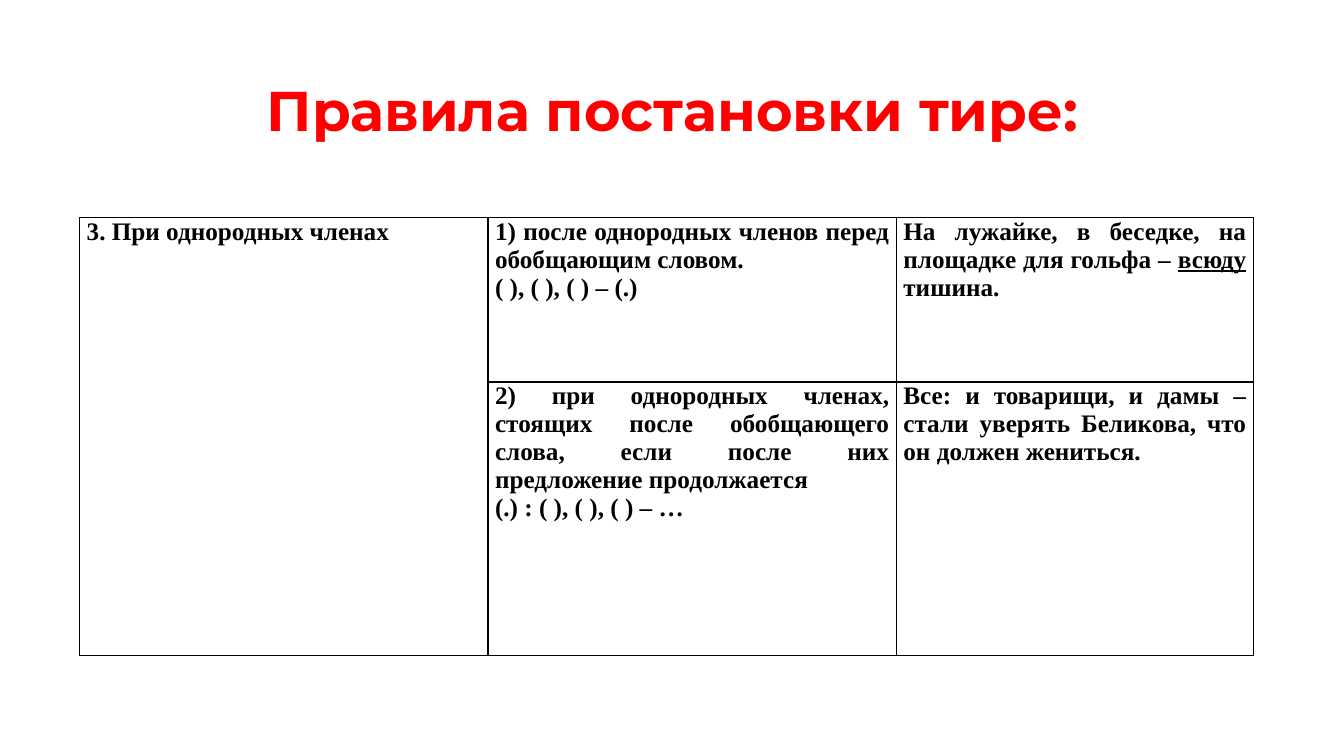
from dataclasses import dataclass

from lxml import etree
from pptx import Presentation, util as u
from pptx.dml.color import RGBColor
from pptx.enum import text
from pptx.oxml.ns import qn

RED = RGBColor(0xFF, 0x00, 0x00)
BLACK = RGBColor(0x00, 0x00, 0x00)
WHITE = RGBColor(0xFF, 0xFF, 0xFF)
TITLE_FONT = "Montserrat"
BODY_FONT = "Times New Roman"

COLUMNS = (4.05, 4.05, 3.54)
ROWS = (1.63, 2.71)


@dataclass(frozen=True)
class RuleCell:
    row: int
    col: int
    lines: tuple[str, ...]
    underlined: str = ""


CELLS = (
    RuleCell(0, 0, ("3. При однородных членах",)),
    RuleCell(0, 1, ("1) после однородных членов перед обобщающим словом.",
                    "( ), ( ), ( ) – (.)")),
    RuleCell(0, 2, ("На лужайке, в беседке, на площадке для гольфа – всюду тишина.",),
             underlined="всюду"),
    RuleCell(1, 1, ("2) при однородных членах, стоящих после обобщающего слова, "
                    "если после них предложение продолжается",
                    "(.) : ( ), ( ), ( ) – …")),
    RuleCell(1, 2, ("Все: и товарищи, и дамы – стали уверять Беликова, "
                    "что он должен жениться.",)),
)


def format_font(font, name: str, size: int, color: RGBColor) -> None:
    font.name, font.size, font.bold = name, u.Pt(size), True
    font.color.rgb = color


def add_title(s, title: str) -> None:
    sp = s.shapes.title
    sp.left, sp.top, sp.width, sp.height = map(u.Inches, (0.92, 0.4, 11.5, 1.45))
    tf = sp.text_frame
    tf.text = title
    tf.vertical_anchor = text.MSO_ANCHOR.MIDDLE
    p = tf.paragraphs[0]
    p.alignment, p.line_spacing = text.PP_ALIGN.CENTER, 0.9
    format_font(p.runs[0].font, TITLE_FONT, 40, RED)


def style_cell(cell) -> None:
    """Give a cell a white fill, tight margins and a thin black frame."""
    cell.fill.solid()
    cell.fill.fore_color.rgb = WHITE
    cell.margin_left = cell.margin_right = u.Inches(0.07)
    cell.margin_top = cell.margin_bottom = 0
    tc_pr = cell._tc.get_or_add_tcPr()
    for i, side in enumerate(("lnL", "lnR", "lnT", "lnB")):
        ln = etree.Element(qn(f"a:{side}"), w=str(u.Pt(1)))
        fill = etree.SubElement(ln, qn("a:solidFill"))
        etree.SubElement(fill, qn("a:srgbClr"), val=str(BLACK))
        tc_pr.insert(i, ln)


def fill_paragraph(p, line: str, underlined: str) -> None:
    p.alignment = text.PP_ALIGN.JUSTIFY
    parts = line.partition(underlined) if underlined else (line,)
    for part in filter(None, parts):
        r = p.add_run()
        r.text = part
        format_font(r.font, BODY_FONT, 18, BLACK)
        if part == underlined:
            r.font.underline = True


def add_rules_table(s) -> None:
    table = s.shapes.add_table(
        len(ROWS), len(COLUMNS), u.Inches(0.79), u.Inches(2.16),
        u.Inches(sum(COLUMNS)), u.Inches(sum(ROWS))).table
    table.first_row = table.horz_banding = False
    for column, width in zip(table.columns, COLUMNS):
        column.width = u.Inches(width)
    for row, height in zip(table.rows, ROWS):
        row.height = u.Inches(height)
    for cell in table.iter_cells():
        style_cell(cell)
    table.cell(0, 0).merge(table.cell(1, 0))
    for rule in CELLS:
        tf = table.cell(rule.row, rule.col).text_frame
        for i, line in enumerate(rule.lines):
            p = tf.add_paragraph() if i else tf.paragraphs[0]
            fill_paragraph(p, line, rule.underlined)


def main() -> None:
    prs = Presentation()
    prs.slide_width, prs.slide_height = u.Inches(13.33), u.Inches(7.5)
    s = prs.slides.add_slide(prs.slide_layouts[5])
    add_title(s, "Правила постановки тире:")
    add_rules_table(s)
    prs.save("out.pptx")


if __name__ == "__main__":
    main()
